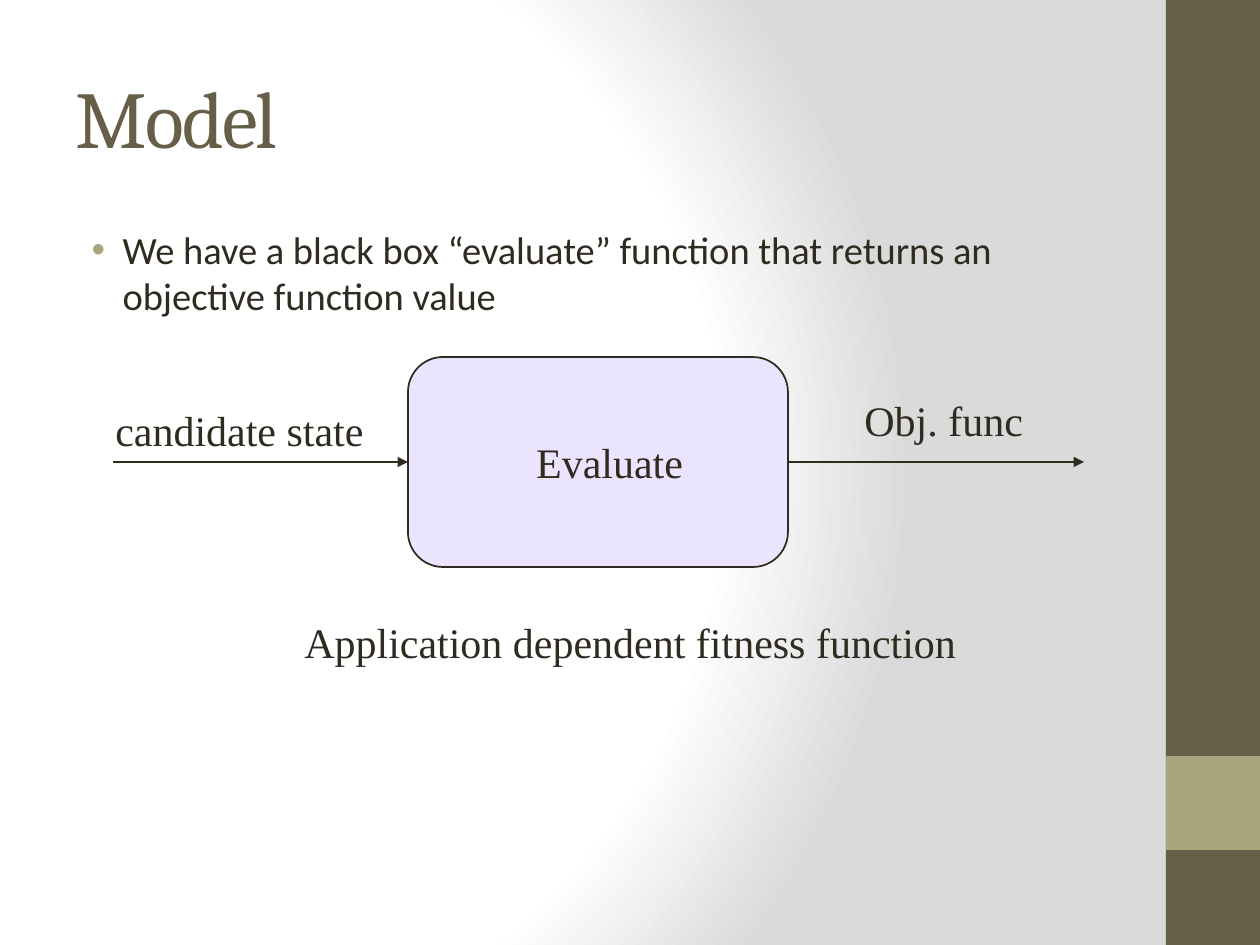
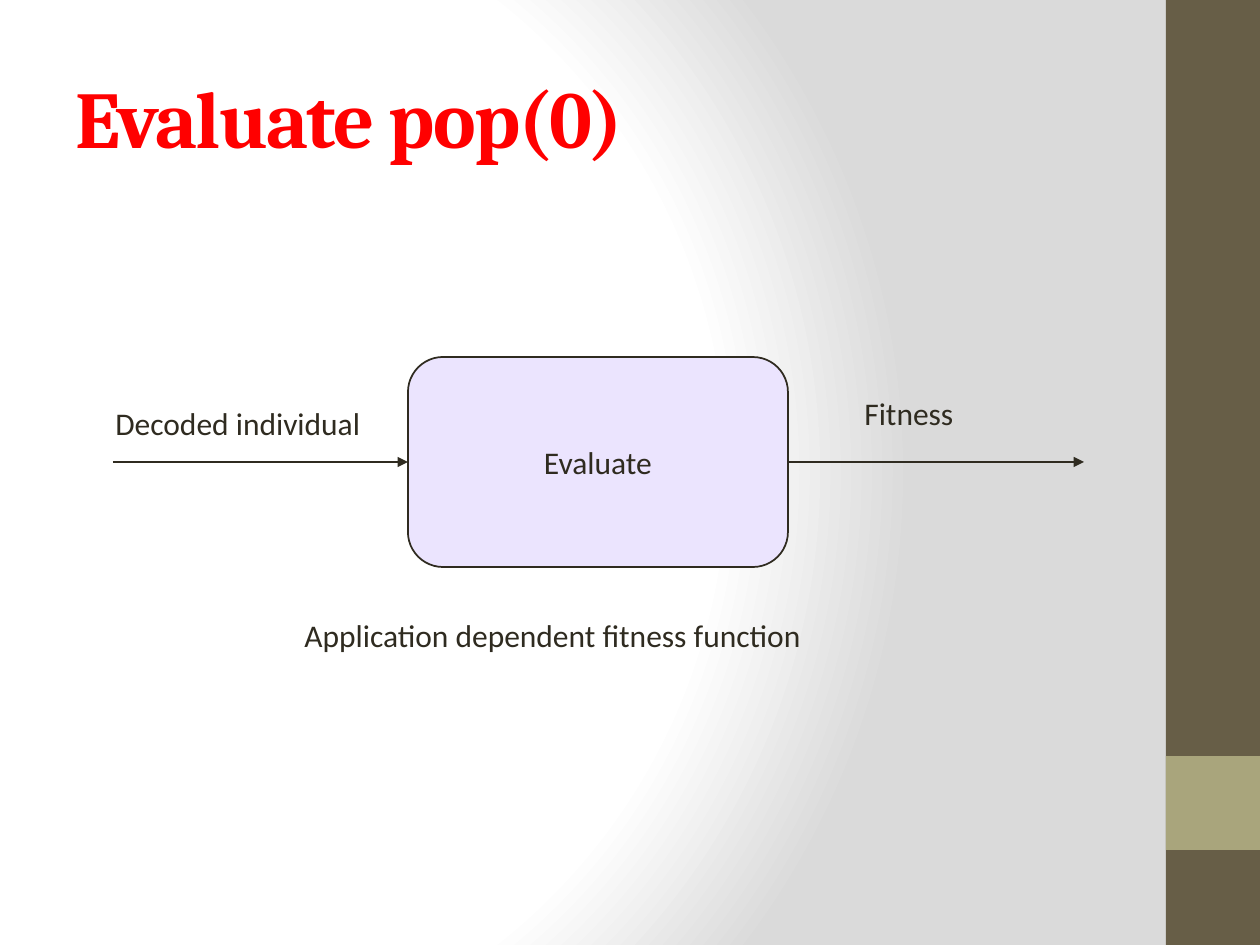
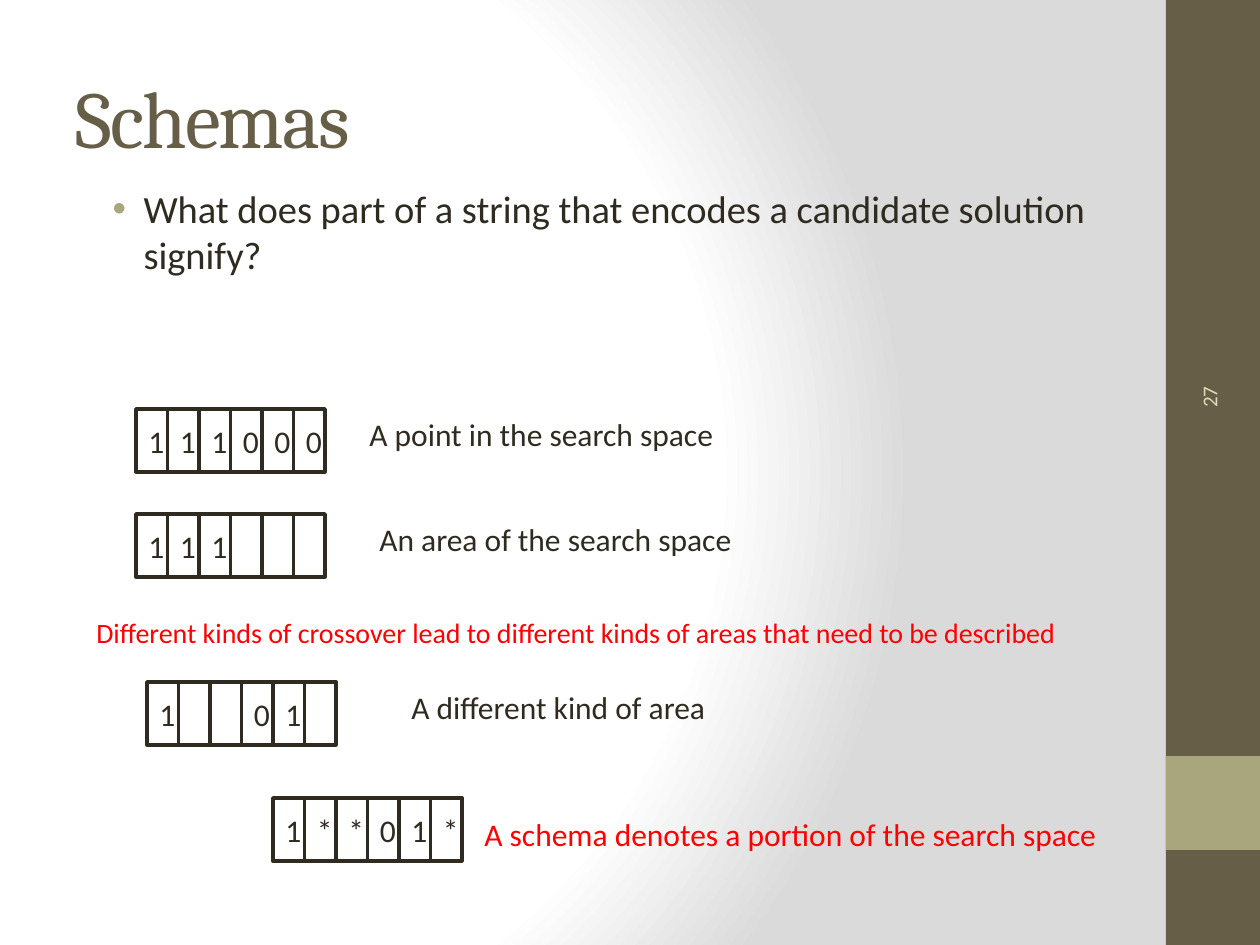
from lxml.etree import SubElement
from pptx import Presentation
from pptx.dml.color import RGBColor as Rgb
from pptx.enum.shapes import MSO_CONNECTOR as Connector, MSO_SHAPE as Preset
from pptx.enum.text import MSO_ANCHOR as Anchor, MSO_AUTO_SIZE as AutoSize, PP_ALIGN as Align
from pptx.oxml import parse_xml
from pptx.oxml.ns import nsdecls, qn
from pptx.util import Pt

PX_PER_INCH = 126
COLOURS = {
    "white": "FFFFFF",
    "grey": "DADADA",
    "brown": "675E47",
    "olive": "A9A57C",
    "cream": "DFDCB7",
    "ink": "2F2B20",
    "red": "FF0000",
    "lilac": "EBE4FE",
}
TITLE = {"name": "Cambria", "size": Pt(46), "bold": False}
BOLD_TITLE = {**TITLE, "bold": True}
BODY = {"name": "Calibri", "size": Pt(22)}
LABEL = {"name": "Calibri", "size": Pt(18)}
SERIF_LABEL = {"name": "Times New Roman", "size": Pt(24)}
NOTE = {"name": "Calibri", "size": Pt(16)}
NUMBER = {"name": "Calibri", "size": Pt(12)}
CELL_WIDTH, CELL_HEIGHT = 31.5, 63


def px(length):
    """Turn a length in px into EMU."""
    return round(length * 914400 / PX_PER_INCH)


def colour(name):
    """Look up a named colour."""
    return Rgb.from_string(COLOURS[name])


def set_values(target, values):
    """Set each attribute named in a dict."""
    for name, value in values.items():
        setattr(target, name, value)


def place(shape, box):
    """Move and size a shape to a px box."""
    set_values(shape, dict(zip(("left", "top", "width", "height"), map(px, box))))


def write(shape, text, font, ink="ink", align=Align.LEFT, **frame_values):
    """Write one formatted paragraph into a shape and return it."""
    frame = shape.text_frame
    set_values(frame, {"auto_size": AutoSize.NONE, "word_wrap": True, **frame_values})
    paragraph = frame.paragraphs[0]
    paragraph.alignment = align
    run = paragraph.add_run()
    run.text = text
    set_values(run.font, font)
    run.font.color.rgb = colour(ink)
    return paragraph


def set_background(master):
    """Give the master its circular white to grey gradient."""
    stops = "".join(
        f'<a:gs pos="{position}000"><a:srgbClr val="{COLOURS[name]}"/></a:gs>'
        for position, name in ((0, "white"), (75, "white"), (100, "grey"))
    )
    slide_data = master.element.cSld
    old_background = slide_data.find(qn("p:bg"))
    if old_background is not None:
        slide_data.remove(old_background)
    slide_data.insert(0, parse_xml(
        f'<p:bg {nsdecls("p", "a")}><p:bgPr><a:gradFill rotWithShape="1">'
        f'<a:gsLst>{stops}</a:gsLst><a:path path="circle">'
        '<a:fillToRect l="20000" t="50000" r="100000" b="50000"/></a:path>'
        '</a:gradFill><a:effectLst/></p:bgPr></p:bg>'
    ))


def add_box(slide, preset, box, fill=None, line_width=None):
    """Add a preset shape with an optional fill and outline."""
    shape = slide.shapes.add_shape(preset, *map(px, box))
    shape.shadow.inherit = False
    if fill:
        shape.fill.solid()
        shape.fill.fore_color.rgb = colour(fill)
    else:
        shape.fill.background()
    if line_width:
        shape.line.color.rgb = colour("ink")
        shape.line.width = Pt(line_width)
    else:
        shape.line.fill.background()
    return shape


def add_slide(presentation, layout_index, title, font=TITLE, ink="brown"):
    """Add a slide with the side bands and a styled title."""
    slide = presentation.slides.add_slide(presentation.slide_layouts[layout_index])
    add_box(slide, Preset.RECTANGLE, (1166, 0, 94, 945), "brown")
    add_box(slide, Preset.RECTANGLE, (1166, 756, 94, 94), "olive")
    place(slide.shapes.title, (63, 38, 1050, 157))
    paragraph = write(slide.shapes.title, title, font, ink, vertical_anchor=Anchor.MIDDLE)
    paragraph.runs[0].font._element.set("spc", "-100")
    return slide


def add_bullet(slide, box, text):
    """Fill the body placeholder with one bullet."""
    body = slide.placeholders[1]
    place(body, box)
    properties = write(body, text, BODY)._p.get_or_add_pPr()
    properties.set("marL", str(px(47)))
    properties.set("indent", str(px(-31)))
    bullet_colour = SubElement(properties, qn("a:buClr"))
    SubElement(bullet_colour, qn("a:srgbClr"), val=COLOURS["olive"])
    SubElement(properties, qn("a:buFont"), typeface="Arial")
    SubElement(properties, qn("a:buChar"), char="•")


def add_label(slide, box, text, font=LABEL, ink="ink", **frame_values):
    """Add a text box."""
    label = slide.shapes.add_textbox(*map(px, box))
    write(label, text, font, ink, **frame_values)
    return label


def add_arrow(slide, start_x, end_x, y):
    """Add a horizontal arrow."""
    arrow = slide.shapes.add_connector(
        Connector.STRAIGHT, px(start_x), px(y), px(end_x), px(y))
    arrow.line.color.rgb = colour("ink")
    arrow.line.width = Pt(1)
    SubElement(arrow.line._get_or_add_ln(), qn("a:tailEnd"), type="triangle")
    SubElement(arrow._element.spPr, qn("a:effectLst"))
    return arrow


def add_evaluation(slide, input_text, output_text, font, **box_values):
    """Draw the evaluate box with its input, output and caption."""
    evaluate = add_box(slide, Preset.ROUNDED_RECTANGLE, (408, 357, 380, 210), "lilac", 1)
    write(evaluate, "Evaluate", font, word_wrap=False,
          vertical_anchor=Anchor.MIDDLE, **box_values)
    add_arrow(slide, 113, 408, 462).end_connect(evaluate, 1)
    add_arrow(slide, 788, 1084, 462).begin_connect(evaluate, 3)
    add_label(slide, (103, 398, 275, 64), input_text, font)
    add_label(slide, (852, 388, 188, 64), output_text, font)
    add_label(slide, (292, 610, 717, 63), "Application dependent fitness function", font)


def add_bit_string(slide, left, top, bits):
    """Draw a row of outlined cells, one for each character."""
    for index, bit in enumerate(bits):
        box = (left + index * CELL_WIDTH, top, CELL_WIDTH, CELL_HEIGHT)
        cell = add_box(slide, Preset.RECTANGLE, box, line_width=2)
        if bit != " ":
            write(cell, bit, LABEL, word_wrap=False, vertical_anchor=Anchor.MIDDLE)


def add_model_slide(presentation):
    """Build the model slide."""
    slide = add_slide(presentation, 1, "Model")
    add_bullet(slide, (63, 220, 1050, 662),
               "We have a black box “evaluate” function that returns an "
               "objective function value")
    add_evaluation(slide, "candidate state", "Obj. func", SERIF_LABEL, margin_left=px(118))


def add_population_slide(presentation):
    """Build the population evaluation slide."""
    slide = add_slide(presentation, 5, "Evaluate pop(0)", BOLD_TITLE, "red")
    add_evaluation(slide, "Decoded individual", "Fitness", LABEL, align=Align.CENTER)


def add_schemas_slide(presentation):
    """Build the schemas slide."""
    slide = add_slide(presentation, 1, "Schemas")
    number = add_label(slide, (1041, 227, 336, 50), "27", NUMBER, "cream",
                       vertical_anchor=Anchor.MIDDLE)
    number.rotation = 270
    add_bullet(slide, (84, 179, 1071, 147),
               "What does part of a string that encodes a candidate solution signify?")
    for left, top, bits in (
        (136, 409, "111000"),
        (136, 514, "111   "),
        (147, 682, "1  01 "),
        (273, 798, "1**01*"),
    ):
        add_bit_string(slide, left, top, bits)
    for left, top, text in (
        (357, 409, "A point in the search space"),
        (367, 514, "An area of the search space"),
        (399, 682, "A different kind of area"),
    ):
        add_label(slide, (left, top, 388, 42), text)
    add_label(slide, (472, 809, 693, 50),
              "A schema denotes a portion of the search space", ink="red")
    add_label(slide, (84, 609, 1008, 47),
              "Different kinds of crossover lead to different kinds of areas "
              "that need to be described", NOTE, "red")


def main():
    """Build and save the presentation."""
    presentation = Presentation()
    set_values(presentation, {"slide_width": px(1260), "slide_height": px(945)})
    set_background(presentation.slide_master)
    add_model_slide(presentation)
    add_population_slide(presentation)
    add_schemas_slide(presentation)
    presentation.save("out.pptx")


if __name__ == "__main__":
    main()
